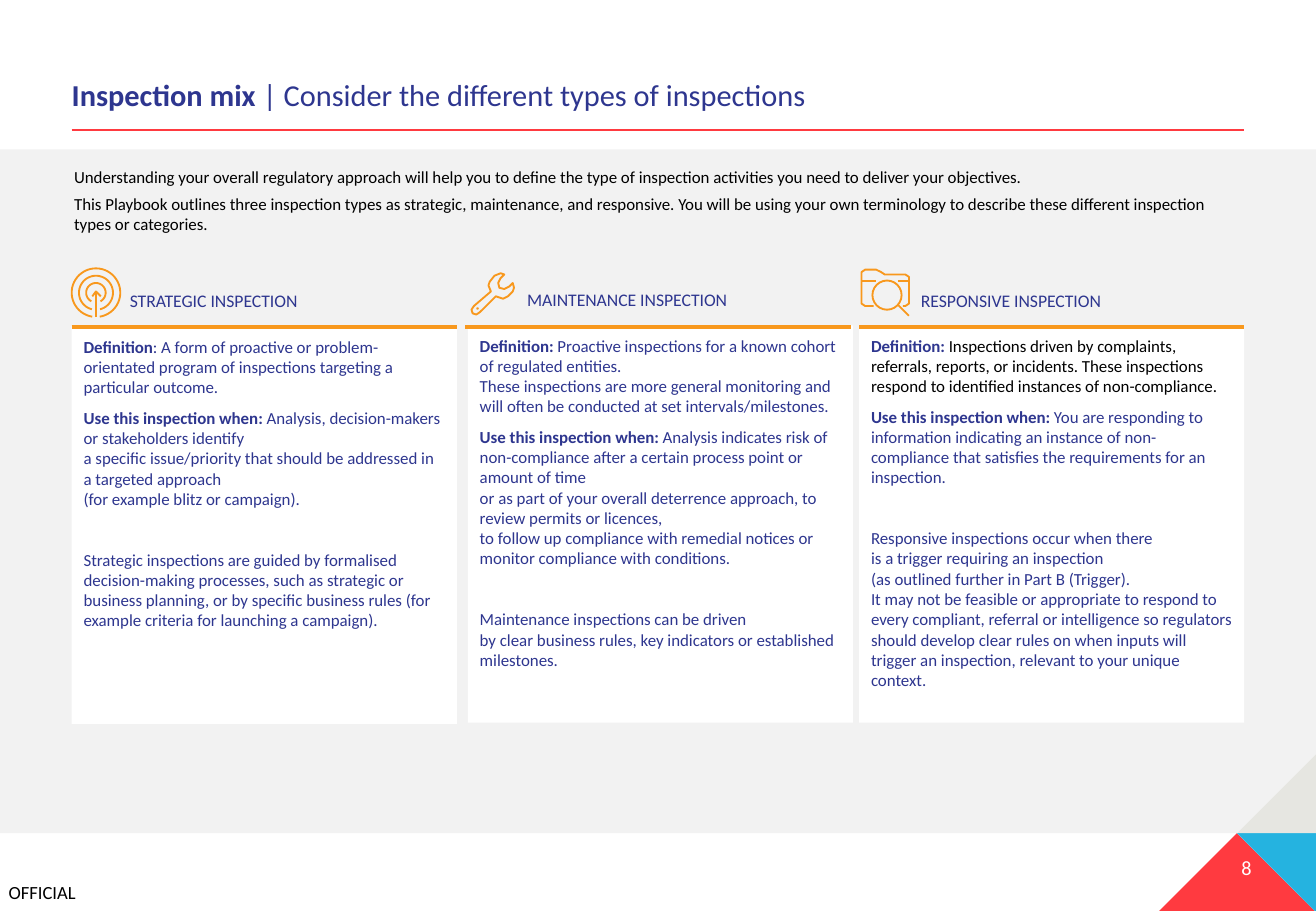
from math import cos, radians, sin

from lxml import etree
from pptx import Presentation
from pptx.dml.color import RGBColor
from pptx.enum.shapes import MSO_CONNECTOR, MSO_SHAPE
from pptx.enum.text import MSO_ANCHOR, PP_ALIGN
from pptx.oxml.ns import qn
from pptx.util import Inches, Pt

LEFT, RIGHT = PP_ALIGN.LEFT, PP_ALIGN.RIGHT
TOP, BOTTOM = MSO_ANCHOR.TOP, MSO_ANCHOR.BOTTOM
RECTANGLE, OVAL, STRAIGHT = MSO_SHAPE.RECTANGLE, MSO_SHAPE.OVAL, MSO_CONNECTOR.STRAIGHT

FONT = "Calibri"
COLOURS = {
    "navy": "2E368F", "black": "000000", "white": "FFFFFF", "panel": "F2F2F2",
    "red": "FF3A40", "blue": "25B3E0", "stone": "E6E6E1", "orange": "F8981D",
}
PAGE_WIDTH, PAGE_HEIGHT = 10.83, 7.5
MARGIN, CONTENT_WIDTH = 0.59, 9.65
CARD_WIDTH, CARD_HEIGHT, COLUMN_PITCH, RULE_TOP = 3.17, 3.27, 3.24, 2.69
PLAIN_INSETS = (0, 0.05, 0, 0.05)

INTRO = [
    "Understanding your overall regulatory approach will help you to define the type of "
    "inspection activities you need to deliver your objectives.",
    "This Playbook outlines three inspection types as strategic, maintenance, and responsive. "
    "You will be using your own terminology to describe these different inspection types or "
    "categories.",
]
INSPECTIONS = [
    {
        "heading": "STRATEGIC INSPECTION", "heading_box": (0.97, 2.09, 3.17, 0.52),
        "icon_at": (0.59, 2.21), "card_at": (0.59, 2.69), "colour": "navy",
        "label": "Definition",
        "definition": ": A form of proactive or problem-orientated program of inspections "
                      "targeting a particular outcome.",
        "use": "Analysis, decision-makers or stakeholders identify\n"
               "a specific issue/priority that should be addressed in a targeted approach\n"
               "(for example blitz or campaign).",
        "note": "Strategic inspections are guided by formalised decision-making processes, such "
                "as strategic or business planning, or by specific business rules (for example "
                "criteria for launching a campaign).",
    },
    {
        "heading": "MAINTENANCE INSPECTION", "heading_box": (4.24, 2.21, 3.17, 0.39),
        "icon_at": (3.87, 2.24), "card_at": (3.85, 2.68), "colour": "navy",
        "label": "Definition: ",
        "definition": "Proactive inspections for a known cohort of regulated entities.\n"
                      "These inspections are more general monitoring and will often be "
                      "conducted at set intervals/milestones.",
        "use": "Analysis indicates risk of non-compliance after a certain process point or "
               "amount of time\nor as part of your overall deterrence approach, to review "
               "permits or licences,\nto follow up compliance with remedial notices or monitor "
               "compliance with conditions.",
        "note": "Maintenance inspections can be driven\n"
                "by clear business rules, key indicators or established milestones.",
    },
    {
        "heading": "RESPONSIVE INSPECTION", "heading_box": (7.48, 2, 2.75, 0.61),
        "icon_at": (7.08, 2.21), "card_at": (7.07, 2.68), "colour": "black",
        "label": "Definition: ",
        "definition": "Inspections driven by complaints, referrals, reports, or incidents. These "
                      "inspections respond to identified instances of non-compliance.",
        "use": "You are responding to information indicating an instance of non-compliance that "
               "satisfies the requirements for an inspection.",
        "note": "Responsive inspections occur when there\nis a trigger requiring an inspection\n"
                "(as outlined further in Part B (Trigger).\n"
                "It may not be feasible or appropriate to respond to every compliant, referral "
                "or intelligence so regulators should develop clear rules on when inputs will "
                "trigger an inspection, relevant to your unique context.",
    },
]
WRENCH = [
    (0.28, 0.02), (0.25, 0.01), (0.2, 0.03), (0.16, 0.08), (0.15, 0.11), (0.17, 0.16),
    (0.03, 0.28), (0.01, 0.31), (0.02, 0.34), (0.05, 0.35), (0.08, 0.33), (0.21, 0.2),
    (0.27, 0.22), (0.31, 0.2), (0.35, 0.16), (0.36, 0.13), (0.35, 0.09), (0.32, 0.12),
    (0.28, 0.14), (0.24, 0.13), (0.23, 0.09), (0.25, 0.05),
]
FOLDER = [
    (0.11, 0.31), (0.04, 0.31), (0.01, 0.29), (0.01, 0.03), (0.04, 0.01), (0.13, 0.01),
    (0.17, 0.03), (0.2, 0.05), (0.37, 0.05), (0.4, 0.07), (0.4, 0.29), (0.37, 0.31),
    (0.35, 0.31),
]


def colour_of(name):
    """Return the named colour."""
    return RGBColor.from_string(COLOURS[name])


def add_span(para, text, size=10, colour="navy", bold=False):
    """Add formatted text to a paragraph, with a line break at each newline."""
    for number, line in enumerate(text.split("\n")):
        if number:
            para.add_line_break()
        span = para.add_run()
        span.text = line
        span.font.name, span.font.size, span.font.bold = FONT, Pt(size), bold
        span.font.color.rgb = colour_of(colour)


def fill_frame(shape, paragraphs, insets=PLAIN_INSETS, anchor=TOP, align=LEFT, after=0):
    """Write paragraphs, each a list of (text, format) spans, and return them."""
    frame = shape.text_frame
    frame.word_wrap, frame.vertical_anchor = True, anchor
    frame.margin_left, frame.margin_top, frame.margin_right, frame.margin_bottom = map(
        Inches, insets)
    for number, spans in enumerate(paragraphs):
        para = frame.add_paragraph() if number else frame.paragraphs[0]
        para.alignment, para.space_after = align, Pt(after)
        for text, style in spans:
            add_span(para, text, **style)
    return frame.paragraphs


def add_text(page, box, paragraphs, **layout):
    """Add a text box."""
    fill_frame(page.shapes.add_textbox(*map(Inches, box)), paragraphs, **layout)


def paint(shape, fill=None, line=None):
    """Set a shape's fill and thin outline, either of which may be absent."""
    shape.shadow.inherit = False
    if fill:
        shape.fill.solid()
        shape.fill.fore_color.rgb = colour_of(fill)
    else:
        shape.fill.background()
    if line:
        shape.line.color.rgb, shape.line.width = colour_of(line), Pt(1.1)
    else:
        shape.line.fill.background()


def add_block(page, box, kind=RECTANGLE, **colours):
    """Add a preset shape."""
    shape = page.shapes.add_shape(kind, *map(Inches, box))
    paint(shape, **colours)
    return shape


def add_outline(page, points, at=(0, 0), close=True, **colours):
    """Add a freeform through points measured from a corner."""
    places = [(Inches(at[0] + x), Inches(at[1] + y)) for x, y in points]
    builder = page.shapes.build_freeform(*places[0])
    builder.add_line_segments(places[1:], close=close)
    paint(builder.convert_to_shape(), **colours)


def add_rule(page, start, end, at=(0, 0), colour="orange", width=1.1):
    """Add a straight line between points measured from a corner."""
    ends = [Inches(at[axis] + point[axis]) for point in (start, end) for axis in (0, 1)]
    rule = page.shapes.add_connector(STRAIGHT, *ends)
    rule.line.color.rgb, rule.line.width = colour_of(colour), Pt(width)
    etree.SubElement(rule._element.spPr, qn("a:effectLst"))


def draw_target(page, at):
    """Draw three open rings with an arrow rising to their centre."""
    for radius, gap in ((0.2, 9), (0.14, 14), (0.08, 28)):
        angles = [radians(90 + gap + (360 - 2 * gap) * step / 48) for step in range(49)]
        ring = [(0.2 + radius * cos(angle), 0.2 + radius * sin(angle)) for angle in angles]
        add_outline(page, ring, at, close=False, line="orange")
    add_rule(page, (0.2, 0.4), (0.2, 0.19), at)
    add_outline(page, [(0.17, 0.23), (0.2, 0.19), (0.24, 0.23)], at, close=False, line="orange")


def draw_wrench(page, at):
    """Draw a wrench with a hole in its handle."""
    add_outline(page, WRENCH, at, line="orange")
    add_block(page, (at[0] + 0.05, at[1] + 0.29, 0.02, 0.02), OVAL, fill="orange")


def draw_folder(page, at):
    """Draw a folder under a magnifying glass."""
    add_outline(page, FOLDER, at, close=False, line="orange")
    add_block(page, (at[0] + 0.1, at[1] + 0.1, 0.24, 0.24), OVAL, line="orange")
    for start, end in (((0.01, 0.1), (0.13, 0.1)), ((0.31, 0.1), (0.4, 0.1)),
                       ((0.31, 0.3), (0.4, 0.39))):
        add_rule(page, start, end, at)


def add_header(page, box):
    """Place the title and the red rule beneath it."""
    title = page.shapes.title
    title.left, title.top, title.width, title.height = map(Inches, box)
    spans = [("Inspection mix ", {"size": 18, "bold": True}),
             ("| Consider the different types of inspections", {"size": 18})]
    fill_frame(title, [spans], anchor=BOTTOM)[0].line_spacing = 0.9
    left, top, width, height = box
    add_rule(page, (0, 0), (width, 0), (left, top + height + 0.09), "red", 1.25)


def add_footer(page, corner):
    """Place the marking, the corner triangles and the page number."""
    add_text(page, (0.07, 7.25, 0.59, 0.18),
             [[("OFFICIAL", {"size": 11, "colour": "black"})]], insets=(0, 0, 0, 0))
    side = 0.65
    add_outline(page, [(0, 0), (-side, side), (side, side)], corner, fill="red")
    add_outline(page, [(0, 0), (side, 0), (side, side)], corner, fill="blue")
    add_outline(page, [(0, 0), (side, -side), (side, 0)], corner, fill="stone")
    add_text(page, (corner[0] - 0.75, corner[1] + 0.13, 0.87, 0.3),
             [[("8", {"size": 12, "colour": "white"})]], align=RIGHT)


def add_inspection(page, left, inspection, draw_icon):
    """Place one inspection type: card, heading, rule and icon."""
    card = add_block(page, (*inspection["card_at"], CARD_WIDTH, CARD_HEIGHT), fill="white")
    paras = fill_frame(card, [
        [(inspection["label"], {"bold": True}),
         (inspection["definition"], {"colour": inspection["colour"]})],
        [("Use this inspection when: ", {"bold": True}), (inspection["use"], {})],
        [(inspection["note"], {})],
    ], insets=(0.1, 0.08, 0.1, 0.06), after=6)
    paras[-1].space_before = Pt(18)
    add_text(page, inspection["heading_box"], [[(inspection["heading"], {"size": 10.5})]],
             insets=(0.1, 0.05, 0.1, 0.05), anchor=BOTTOM)
    add_rule(page, (0, 0), (CARD_WIDTH, 0), (left, RULE_TOP), width=2.5)
    draw_icon(page, inspection["icon_at"])


def main():
    """Build and save the slide."""
    deck = Presentation()
    deck.slide_width, deck.slide_height = Inches(PAGE_WIDTH), Inches(PAGE_HEIGHT)
    page = deck.slides.add_slide(deck.slide_layouts[5])
    add_block(page, (0, 1.23, PAGE_WIDTH, 5.63), fill="panel")
    add_footer(page, (10.18, 6.86))
    add_header(page, (MARGIN, 0.61, CONTENT_WIDTH, 0.37))
    add_text(page, (0.61, 1.32, 9.62, 0.97),
             [[(text, {"colour": "black"})] for text in INTRO], after=4)
    icons = (draw_target, draw_wrench, draw_folder)
    for number, (inspection, draw_icon) in enumerate(zip(INSPECTIONS, icons)):
        add_inspection(page, MARGIN + number * COLUMN_PITCH, inspection, draw_icon)
    deck.save("out.pptx")


if __name__ == "__main__":
    main()
